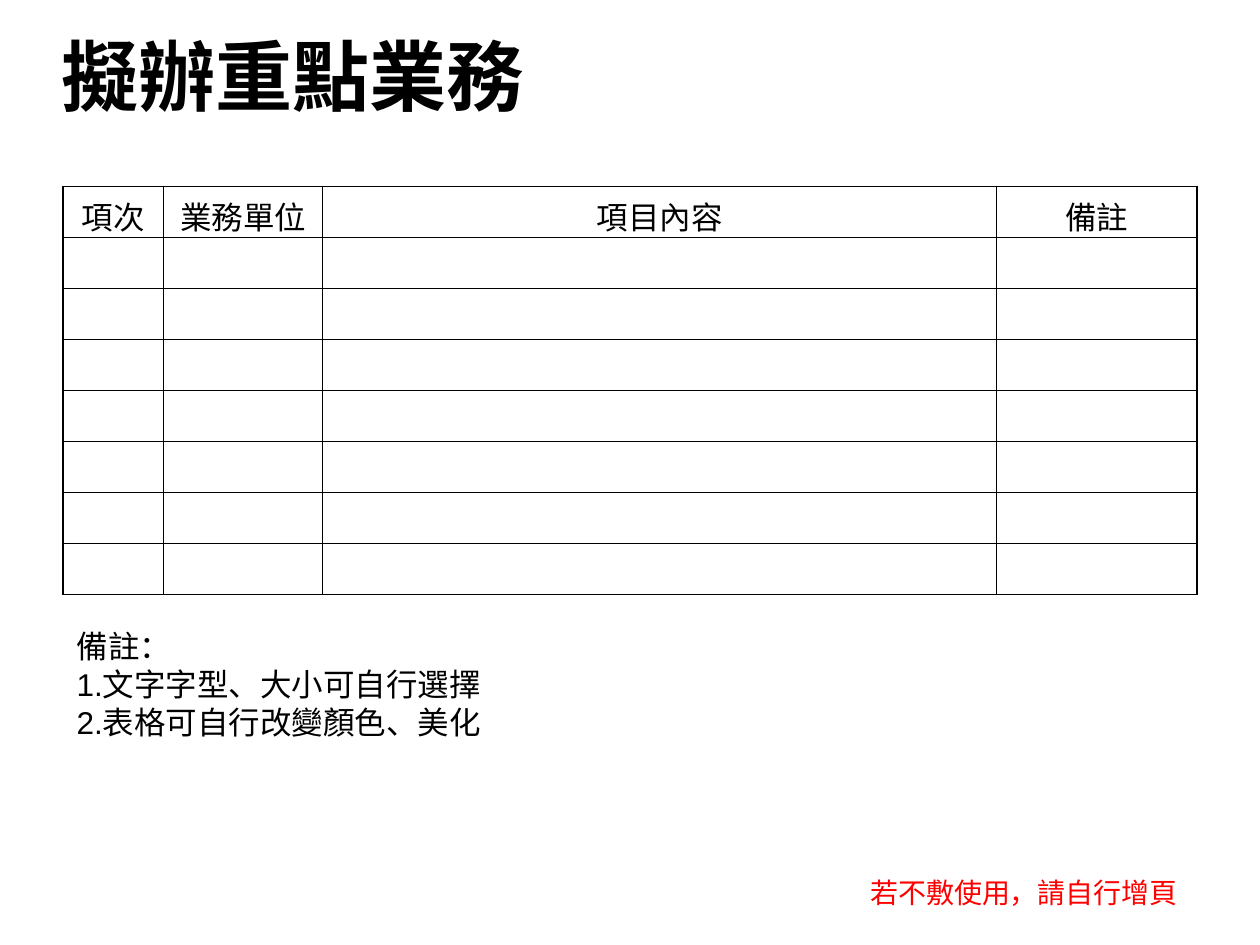
from dataclasses import dataclass

from lxml.etree import SubElement
from pptx import Presentation
from pptx.dml.color import RGBColor
from pptx.enum.text import MSO_ANCHOR as Anchor, PP_ALIGN as Align
from pptx.oxml.ns import qn
from pptx.util import Inches, Pt

BLACK = "000000"
RED = "FF0000"
THIN, THICK = 0.5, 1
HEADINGS = ["項次", "業務單位", "項目內容", "備註"]
COLUMN_WIDTHS = [0.8, 1.26, 5.35, 1.59]
ROW_COUNT = 8
ROW_HEIGHT = 0.405
THICK_COLUMN_EDGES = {0, 3, 4}
THICK_ROW_EDGES = {0, ROW_COUNT - 1, ROW_COUNT}


@dataclass
class Caption:
    lines: list[str]
    left: float
    top: float
    width: float
    height: float
    size: float
    font: str = "Arial"
    color: str = BLACK
    bold: bool = False
    anchor: Anchor = Anchor.TOP


CAPTIONS = [
    Caption(["擬辦重點業務"], 0.39, 0, 7.48, 1.18, 44,
            font="Times New Roman", bold=True, anchor=Anchor.MIDDLE),
    Caption(["若不敷使用，請自行增頁"], 6.81, 6.9, 2.99, 0.37, 16, color=RED),
    Caption(["備註：", "1.文字字型、大小可自行選擇", "2.表格可自行改變顏色、美化"],
            0.51, 4.93, 4.09, 1.01, 18),
]


def rgb(value: str) -> RGBColor:
    return RGBColor.from_string(value)


def style_font(font, name: str, size: float, color: str, bold: bool = False) -> None:
    font.name = name
    font.size = Pt(size)
    font.bold = bold
    font.color.rgb = rgb(color)


def draw_caption(slide, caption: Caption) -> None:
    box = slide.shapes.add_textbox(Inches(caption.left), Inches(caption.top),
                                   Inches(caption.width), Inches(caption.height))
    frame = box.text_frame
    frame.word_wrap = True
    frame.vertical_anchor = caption.anchor
    frame.text = "\n".join(caption.lines)
    for paragraph in frame.paragraphs:
        for run in paragraph.runs:
            style_font(run.font, caption.font, caption.size, caption.color, caption.bold)


def draw_border(cell, side: str, weight: float) -> None:
    line = SubElement(cell._tc.get_or_add_tcPr(), qn(f"a:ln{side}"), w=str(Pt(weight)))
    fill = SubElement(line, qn("a:solidFill"))
    SubElement(fill, qn("a:srgbClr"), val=BLACK)


def edge_weight(edge: int, thick_edges: set[int]) -> float:
    return THICK if edge in thick_edges else THIN


def draw_work_table(slide) -> None:
    table = slide.shapes.add_table(
        ROW_COUNT, len(HEADINGS), Inches(0.5), Inches(1.48),
        Inches(sum(COLUMN_WIDTHS)), Inches(ROW_COUNT * ROW_HEIGHT)).table
    table.first_row = False
    table.horz_banding = False
    for column, width in zip(table.columns, COLUMN_WIDTHS):
        column.width = Inches(width)
    for row_index, row in enumerate(table.rows):
        row.height = Inches(ROW_HEIGHT)
        for column_index, cell in enumerate(row.cells):
            draw_border(cell, "L", edge_weight(column_index, THICK_COLUMN_EDGES))
            draw_border(cell, "R", edge_weight(column_index + 1, THICK_COLUMN_EDGES))
            draw_border(cell, "T", edge_weight(row_index, THICK_ROW_EDGES))
            draw_border(cell, "B", edge_weight(row_index + 1, THICK_ROW_EDGES))
            cell.fill.background()
    for cell, heading in zip(table.rows[0].cells, HEADINGS):
        cell.text_frame.text = heading
        paragraph = cell.text_frame.paragraphs[0]
        paragraph.alignment = Align.CENTER
        style_font(paragraph.runs[0].font, "Arial", 18, BLACK)


def main() -> None:
    deck = Presentation()
    deck.slide_width = Inches(10)
    deck.slide_height = Inches(7.5)
    slide = deck.slides.add_slide(deck.slide_layouts[6])
    title, *notes = CAPTIONS
    draw_caption(slide, title)
    draw_work_table(slide)
    for note in notes:
        draw_caption(slide, note)
    deck.save("out.pptx")


if __name__ == "__main__":
    main()
